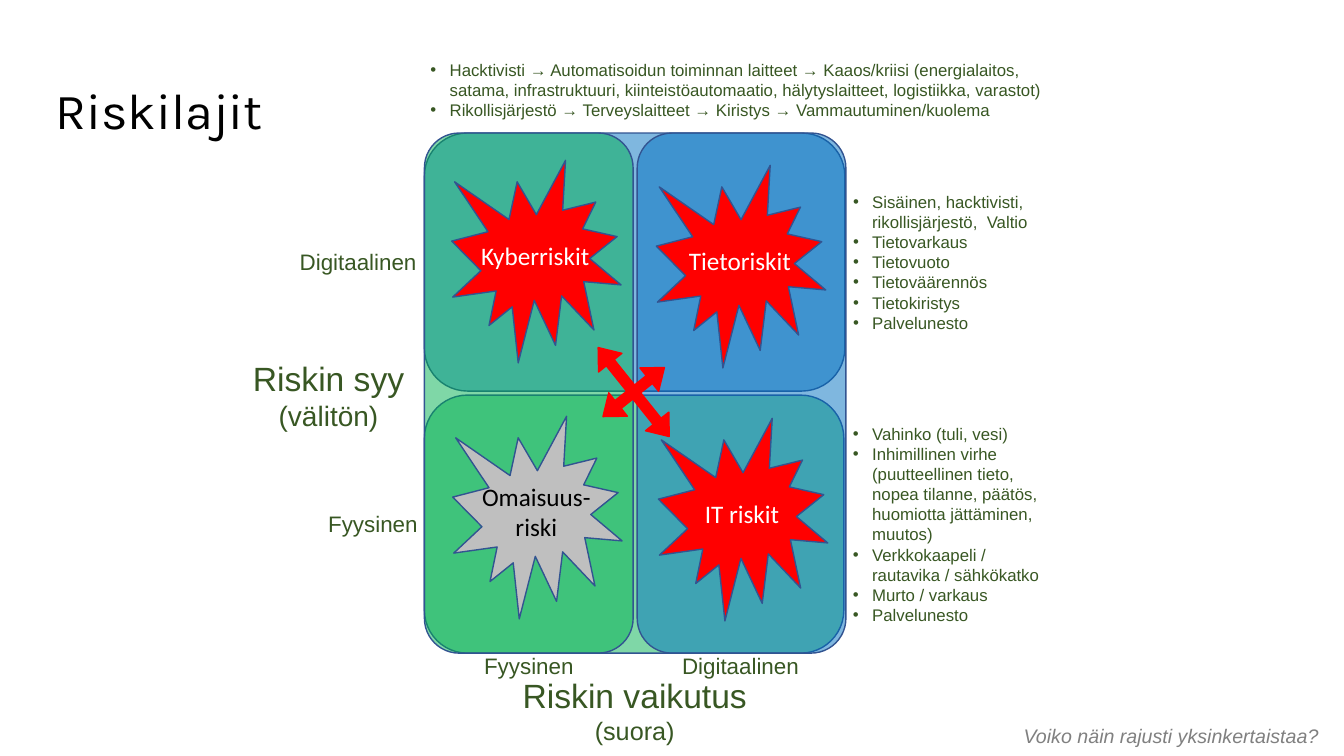
from dataclasses import dataclass

from lxml import etree
from pptx import Presentation
from pptx import util as u
from pptx.dml.color import RGBColor
from pptx.enum import shapes, text
from pptx.oxml.ns import qn

EMU_PER_PX = 9144
LEFT, CENTER, RIGHT = text.PP_ALIGN.LEFT, text.PP_ALIGN.CENTER, text.PP_ALIGN.RIGHT


@dataclass(frozen=True)
class Theme:
    title_font: str = "Karla"
    body_font: str = "Arial"
    burst_font: str = "Calibri"
    black: str = "000000"
    white: str = "FFFFFF"
    label: str = "385723"
    question: str = "808080"
    physical: str = "00B050"
    digital: str = "0070C0"
    outline: str = "325491"
    alarm: str = "FF0000"
    neutral: str = "BFBFBF"
    title_size: int = 36
    axis_size: int = 24
    cause_size: int = 20
    effect_size: int = 18
    burst_size: int = 18
    label_size: int = 16
    question_size: int = 14
    list_size: int = 12


THEME = Theme()


def px(value):
    return u.Emu(value * EMU_PER_PX)


def place(shape, box):
    shape.left, shape.top, shape.width, shape.height = map(px, box)


def format_paragraph(paragraph, size, color, font=THEME.body_font, align=LEFT):
    paragraph.alignment = align
    for run in paragraph.runs:
        run.font.size = u.Pt(size)
        run.font.name = font
        run.font.color.rgb = RGBColor.from_string(color)


def add_title(slide, words, box):
    title = slide.shapes.title
    place(title, box)
    frame = title.text_frame
    frame.text = words
    frame.auto_size = text.MSO_AUTO_SIZE.NONE
    frame.vertical_anchor = text.MSO_ANCHOR.MIDDLE
    frame.paragraphs[0].line_spacing = 0.9
    format_paragraph(frame.paragraphs[0], THEME.title_size, THEME.black, THEME.title_font)


def add_filled_shape(slide, kind, box, fill, line=THEME.outline):
    shape = slide.shapes.add_shape(kind, *map(px, box))
    shape.shadow.inherit = False
    shape.fill.solid()
    shape.fill.fore_color.rgb = RGBColor.from_string(fill)
    shape.line.color.rgb = RGBColor.from_string(line)
    shape.line.width = u.Pt(1)
    return shape


def add_band(slide, box, fill):
    band = add_filled_shape(slide, shapes.MSO_SHAPE.ROUNDED_RECTANGLE, box, fill)
    color = band.element.spPr.find(qn("a:solidFill"))[0]
    etree.SubElement(color, qn("a:alpha"), val="50000")


def add_burst(slide, left, top, words, fill, color):
    burst = add_filled_shape(slide, shapes.MSO_SHAPE.EXPLOSION1, (left, top, 168, 201), fill)
    frame = burst.text_frame
    frame.margin_left = frame.margin_right = frame.margin_top = frame.margin_bottom = 0
    frame.word_wrap = False
    frame.vertical_anchor = text.MSO_ANCHOR.MIDDLE
    paragraph = frame.paragraphs[0]
    paragraph.text = words
    format_paragraph(paragraph, THEME.burst_size, color, THEME.burst_font, CENTER)


def add_cross_arrow(slide, box):
    arrow = add_filled_shape(slide, shapes.MSO_SHAPE.QUAD_ARROW, box, THEME.alarm, THEME.alarm)
    arrow.rotation = 51.4
    for index, value in enumerate((0.127, 0.19, 0.246)):
        arrow.adjustments[index] = value


def add_label(slide, box, lines, color=THEME.label, wrap=False):
    frame = slide.shapes.add_textbox(*map(px, box)).text_frame
    frame.word_wrap = wrap
    frame.auto_size = text.MSO_AUTO_SIZE.SHAPE_TO_FIT_TEXT
    frame.text = "\n".join(words for words, size, align in lines)
    for paragraph, (words, size, align) in zip(frame.paragraphs, lines):
        format_paragraph(paragraph, size, color, align=align)
    return frame


def add_bullet_list(slide, box, items):
    frame = slide.shapes.add_textbox(*map(px, box)).text_frame
    frame.word_wrap = True
    frame.vertical_anchor = text.MSO_ANCHOR.MIDDLE
    frame.margin_left = frame.margin_right = frame.margin_top = frame.margin_bottom = px(4)
    frame.text = "\n".join(items)
    for paragraph in frame.paragraphs:
        properties = paragraph._p.get_or_add_pPr()
        properties.set("marL", str(px(19)))
        properties.set("indent", str(-px(19)))
        etree.SubElement(properties, qn("a:buFont"), typeface=THEME.body_font)
        etree.SubElement(properties, qn("a:buChar"), char="•")
        format_paragraph(paragraph, THEME.list_size, THEME.label)


def main():
    presentation = Presentation()
    presentation.slide_width, presentation.slide_height = px(1333), px(750)
    slide = presentation.slides.add_slide(presentation.slide_layouts[5])
    add_title(slide, "Riskilajit", (45, 40, 366, 145))

    for box, fill in (
        ((421, 392, 416, 256), THEME.physical),
        ((421, 132, 417, 256), THEME.digital),
        ((421, 132, 207, 516), THEME.physical),
        ((632, 132, 207, 516), THEME.digital),
    ):
        add_band(slide, box, fill)

    add_label(slide, (241, 350, 179, 84), [
        ("Riskin syy", THEME.axis_size, LEFT),
        ("(välitön)", THEME.cause_size, CENTER),
    ])
    add_label(slide, (479, 665, 301, 81), [
        ("Riskin vaikutus", THEME.axis_size, CENTER),
        ("(suora)", THEME.effect_size, CENTER),
    ], wrap=True)
    for words, left, top, width, align in (
        ("Fyysinen", 309, 501, 115, RIGHT),
        ("Fyysinen", 467, 642, 115, CENTER),
        ("Digitaalinen", 661, 642, 147, CENTER),
        ("Digitaalinen", 276, 241, 147, RIGHT),
    ):
        add_label(slide, (left, top, width, 37), [(words, THEME.label_size, align)])

    question = add_label(slide, (934, 713, 384, 34), [
        ("Voiko näin rajusti yksinkertaistaa?", THEME.question_size, RIGHT),
    ], THEME.question, wrap=True)
    question.paragraphs[0].runs[0].font.italic = True

    for left, top, words, fill, color in (
        (448, 159, "Kyberriskit", THEME.alarm, THEME.white),
        (651, 164, "Tietoriskit", THEME.alarm, THEME.white),
        (449, 413, "Omaisuus-\nriski", THEME.neutral, THEME.black),
        (653, 415, "IT riskit", THEME.alarm, THEME.white),
    ):
        add_burst(slide, left, top, words, fill, color)
    add_cross_arrow(slide, (572, 350, 113, 78))

    add_bullet_list(slide, (842, 392, 197, 256), [
        "Vahinko (tuli, vesi)",
        "Inhimillinen virhe (puutteellinen tieto, nopea tilanne, päätös, "
        "huomiotta jättäminen, muutos)",
        "Verkkokaapeli / rautavika / sähkökatko",
        "Murto / varkaus",
        "Palvelunesto",
    ])
    add_bullet_list(slide, (842, 132, 182, 256), [
        "Sisäinen, hacktivisti, rikollisjärjestö,  Valtio",
        "Tietovarkaus",
        "Tietovuoto",
        "Tietoväärennös",
        "Tietokiristys",
        "Palvelunesto",
    ])
    add_bullet_list(slide, (423, 46, 616, 86), [
        "Hacktivisti → Automatisoidun toiminnan laitteet → Kaaos/kriisi (energialaitos, "
        "satama, infrastruktuuri, kiinteistöautomaatio, hälytyslaitteet, logistiikka, varastot)",
        "Rikollisjärjestö → Terveyslaitteet → Kiristys → Vammautuminen/kuolema",
    ])
    presentation.save("out.pptx")


if __name__ == "__main__":
    main()
